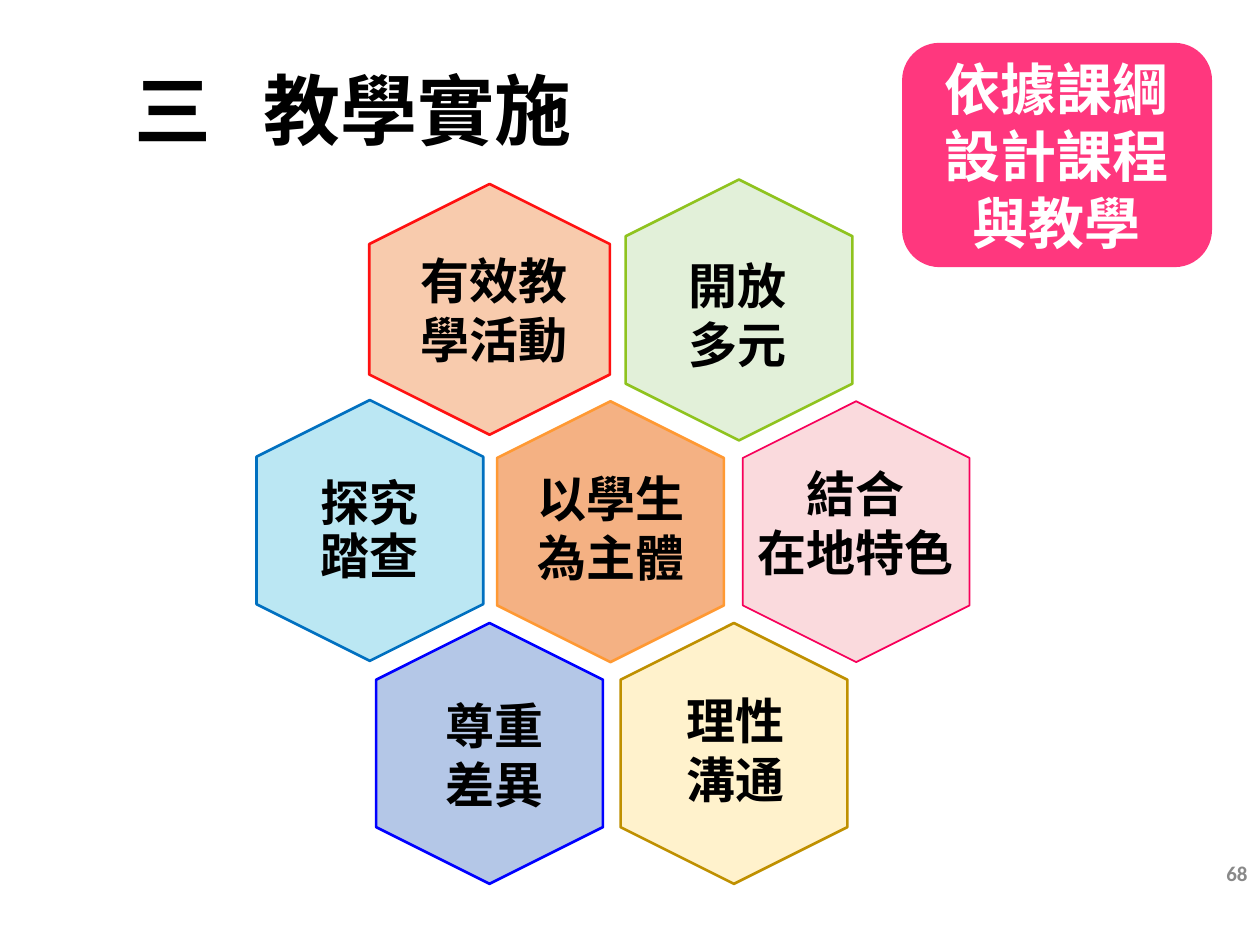
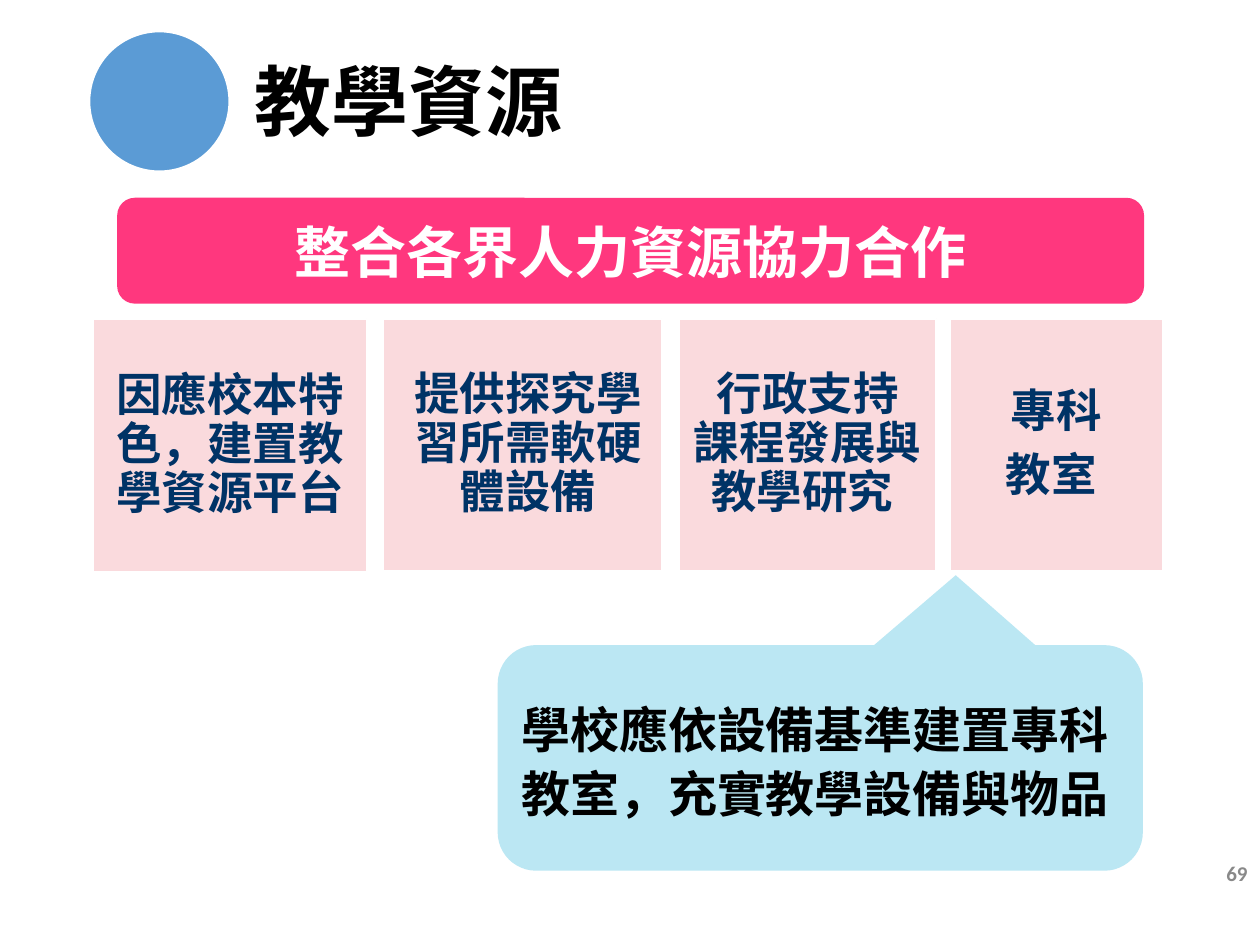
from lxml import etree
from pptx import Presentation
from pptx import util as u
from pptx.dml.color import RGBColor
from pptx.enum import shapes, text
from pptx.oxml.ns import qn

COLORS = {
    "black": "000000", "white": "FFFFFF", "gray": "898989", "navy": "003366",
    "magenta": "FF377E", "pink": "FADADD", "rose": "F7005A",
    "sky": "BBE7F3", "blue": "0070C0", "circle": "5B9BD5",
    "mint": "E2F0D9", "green": "8FC31E", "orange": "F4B183", "amber": "FF9933",
    "cream": "FFF2CC", "gold": "BF9000", "lavender": "B4C7E7", "pure_blue": "0000FF",
    "peach": "F8CBAD", "red": "FF1111",
}
CJK = "Noto Sans CJK SC"
SHAPE = shapes.MSO_SHAPE
ALIGN = text.PP_ALIGN
MIDDLE = text.MSO_ANCHOR.MIDDLE


def write(frame, content, size, color, align=ALIGN.CENTER, spacing=1.0, after=0,
          font=CJK, tab=None):
    frame.word_wrap = True
    for index, line in enumerate(content.split("\n")):
        paragraph = frame.paragraphs[0] if index == 0 else frame.add_paragraph()
        paragraph.text = line
        properties = paragraph._p.get_or_add_pPr()
        if tab:
            tabs = etree.SubElement(properties, qn("a:tabLst"))
            etree.SubElement(tabs, qn("a:tab"), pos=str(u.Inches(tab)), algn="l")
        paragraph.alignment = align
        paragraph.line_spacing = spacing
        paragraph.space_after = u.Pt(after)
        paragraph.font.size = u.Pt(size)
        paragraph.font.bold = True
        paragraph.font.color.rgb = RGBColor.from_string(COLORS[color])
        paragraph.font.name = font
        defaults = properties.find(qn("a:defRPr"))
        etree.SubElement(defaults, qn("a:ea"), typeface=font)


def add_shape(slide, kind, box, fill, line=None, width=1):
    shape = slide.shapes.add_shape(kind, *map(u.Inches, box))
    shape.shadow.inherit = False
    shape.fill.solid()
    shape.fill.fore_color.rgb = RGBColor.from_string(COLORS[fill])
    if line:
        shape.line.color.rgb = RGBColor.from_string(COLORS[line])
        shape.line.width = u.Pt(width)
    else:
        shape.line.fill.background()
    shape.text_frame.vertical_anchor = MIDDLE
    return shape


presentation = Presentation()
presentation.slide_width = u.Inches(10)
presentation.slide_height = u.Inches(7.5)

pages = [
    ("三\t教學實施", "68", 0.74, 0.63, 0.33, 1.02),
    ("教學資源", "69", 0.67, 0.56, 1.35, None),
]
slides = []
for heading, number, left, top, indent, tab in pages:
    slide = presentation.slides.add_slide(presentation.slide_layouts[5])
    title = slide.shapes.title
    title.left, title.top = u.Inches(left), u.Inches(top)
    title.width, title.height = u.Inches(4.13), u.Inches(0.56)
    frame = title.text_frame
    frame.auto_size = text.MSO_AUTO_SIZE.NONE
    frame.vertical_anchor = MIDDLE
    frame.margin_left, frame.margin_right = u.Inches(indent), u.Inches(0.07)
    frame.margin_top = frame.margin_bottom = u.Inches(0.04)
    write(frame, heading, 44, "black", ALIGN.LEFT, 0.9, tab=tab)
    page_number = slide.shapes.add_textbox(*map(u.Inches, (7.75, 6.78, 2.25, 0.4)))
    write(page_number.text_frame, number, 12, "gray", ALIGN.RIGHT, font="Calibri")
    slides.append(slide)

teaching, resources = slides

hexagons = [
    (4.83, 1.56, 2.07, 1.8, "mint", "green", 1.5),
    (1.9, 3.31, 2.07, 1.8, "sky", "blue", 1.5),
    (3.81, 3.32, 2.07, 1.8, "orange", "amber", 1.5),
    (5.76, 3.32, 2.07, 1.8, "pink", "rose", 1),
    (4.79, 5.08, 2.07, 1.8, "cream", "gold", 1.5),
    (2.85, 5.08, 2.07, 1.8, "lavender", "pure_blue", 1.5),
    (2.89, 1.5, 1.99, 1.91, "peach", "red", 1.5),
]
for *box, fill, line, width in hexagons:
    hexagon = add_shape(teaching, SHAPE.HEXAGON, box, fill, line, width)
    hexagon.adjustments[0] = 0.25
    hexagon.rotation = 90

labels = [
    ("理性\n溝通", 5.08, 5.43, 1.51, 1, ALIGN.CENTER),
    ("開放多元", 5.37, 1.98, 1.3, 1, ALIGN.LEFT),
    ("以學生為主體", 4.17, 3.67, 1.4, 1.7, ALIGN.LEFT),
    ("結合\n在地特色", 5.88, 3.63, 1.82, 1.04, ALIGN.CENTER),
    ("尊重差異", 3.44, 5.47, 1.22, 1.17, ALIGN.LEFT),
    ("有效教學活動", 3.24, 1.94, 1.63, 1.17, ALIGN.LEFT),
]
for content, *box, align in labels:
    label = teaching.shapes.add_textbox(*map(u.Inches, box))
    write(label.text_frame, content, 28, "black", align)

inquiry = teaching.shapes.add_textbox(*map(u.Inches, (2.28, 3.6, 1.3, 1.24)))
inquiry.text_frame.vertical_anchor = MIDDLE
write(inquiry.text_frame, "探究\v踏查", 28, "black", spacing=0.9, after=10)

banners = [
    (teaching, SHAPE.ROUNDED_RECTANGLE, (7.16, 0.34, 2.46, 1.78), "依據課綱設計課程與教學"),
    (resources, SHAPE.FLOWCHART_ALTERNATE_PROCESS, (0.93, 1.57, 8.15, 0.84),
     "整合各界人力資源協力合作"),
]
for slide, kind, box, content in banners:
    banner = add_shape(slide, kind, box, "magenta")
    write(banner.text_frame, content, 32, "white")

callout = add_shape(resources, SHAPE.ROUNDED_RECTANGULAR_CALLOUT, (3.95, 5.12, 5.12, 1.79), "sky")
for index, value in enumerate((0.21, -0.81, 0.17)):
    callout.adjustments[index] = value
write(callout.text_frame, "學校應依設備基準建置專科教室，充實教學設備與物品", 28, "black",
      ALIGN.LEFT, 1.1)

cards = [
    ("因應校本特色，建置教學資源平台", 0.74, 2.17, 2.01, 0.1, 0.1),
    ("提供探究學習所需軟硬體設備", 3.04, 2.21, 2, 0.15, 0.06),
    ("行政支持\v課程發展與教學研究 ", 5.39, 2.04, 2, 0.1, 0.1),
    ("專科\n教室 ", 7.54, 1.69, 2, 0.1, 0.1),
]
for content, left, width, height, margin_left, margin_right in cards:
    card = add_shape(resources, SHAPE.RECTANGLE, (left, 2.53, width, height), "pink", "white")
    card.text_frame.margin_left = u.Inches(margin_left)
    card.text_frame.margin_right = u.Inches(margin_right)
    write(card.text_frame, content, 26, "navy", spacing=0.9, after=9)

add_shape(resources, SHAPE.OVAL, (0.71, 0.25, 1.11, 1.11), "circle", "white")

presentation.save("out.pptx")
